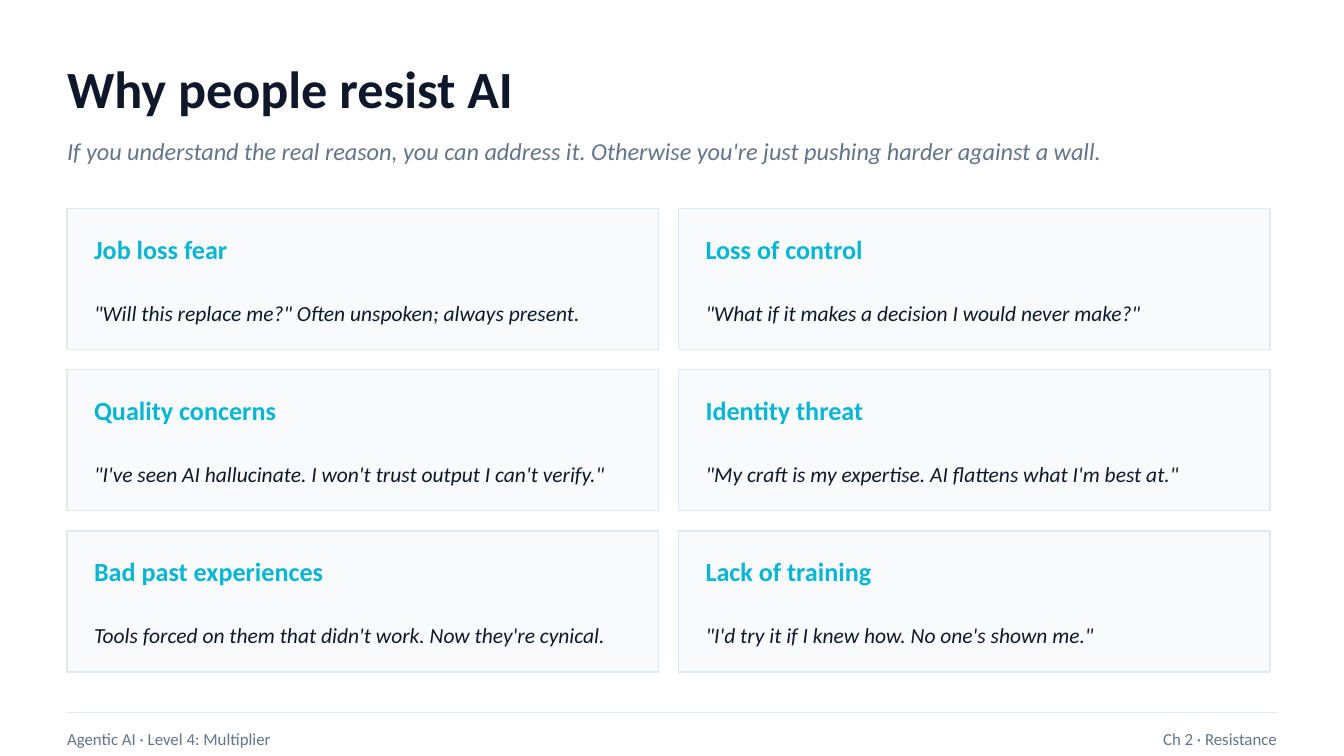
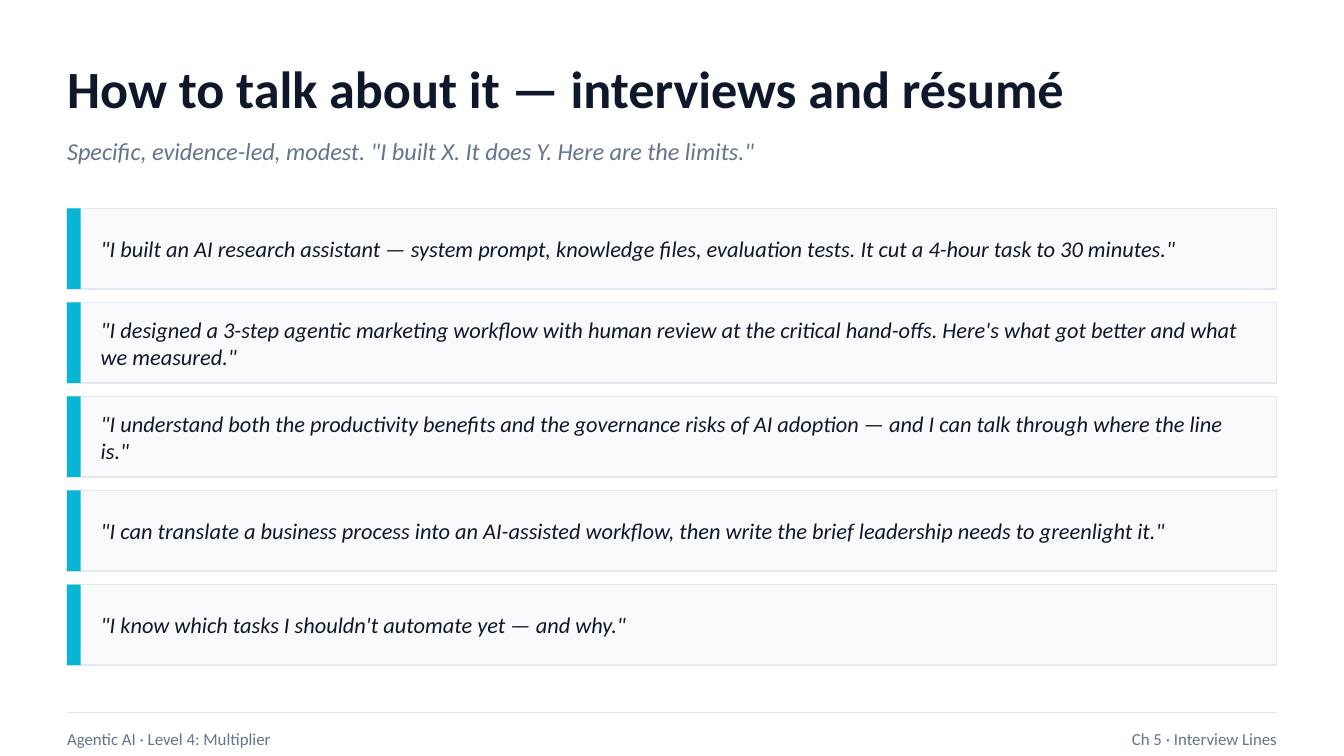
import pptx
import pptx.util
import pptx.dml.color
import pptx.enum.shapes
import pptx.enum.text
import pptx.oxml.ns
from lxml import etree

Inches = pptx.util.Inches
ALIGN = pptx.enum.text.PP_ALIGN

INK = "0F172A"
MUTED = "64748B"
ACCENT = "06B6D4"
PANEL = "F8FAFC"
RULE = "E2E8F0"

FEARS = [
    ("Job loss fear", '"Will this replace me?" Often unspoken; always present.'),
    ("Loss of control", '"What if it makes a decision I would never make?"'),
    ("Quality concerns", '"I\'ve seen AI hallucinate. I won\'t trust output I can\'t verify."'),
    ("Identity threat", '"My craft is my expertise. AI flattens what I\'m best at."'),
    ("Bad past experiences", "Tools forced on them that didn't work. Now they're cynical."),
    ("Lack of training", '"I\'d try it if I knew how. No one\'s shown me."'),
]

QUOTES = [
    '"I built an AI research assistant — system prompt, knowledge files, evaluation tests. '
    'It cut a 4-hour task to 30 minutes."',
    '"I designed a 3-step agentic marketing workflow with human review at the critical hand-offs. '
    'Here\'s what got better and what we measured."',
    '"I understand both the productivity benefits and the governance risks of AI adoption — '
    'and I can talk through where the line is."',
    '"I can translate a business process into an AI-assisted workflow, '
    'then write the brief leadership needs to greenlight it."',
    '"I know which tasks I shouldn\'t automate yet — and why."',
]


def color(code):
    return pptx.dml.color.RGBColor.from_string(code)


class Deck:
    font = "Calibri"
    left = 0.5
    width = 9
    top = 1.55

    def __init__(self):
        self.show = pptx.Presentation()
        self.show.slide_width = Inches(10)
        self.show.slide_height = Inches(10 * 9 / 16)
        self.slide = None

    def text(self, x, y, w, h, words, size, ink=INK, bold=False, italic=False, align=ALIGN.LEFT):
        frame = self.slide.shapes.add_textbox(Inches(x), Inches(y), Inches(w), Inches(h)).text_frame
        frame.word_wrap = True
        frame.vertical_anchor = pptx.enum.text.MSO_ANCHOR.MIDDLE
        frame.margin_left = frame.margin_right = frame.margin_top = frame.margin_bottom = 0
        para = frame.paragraphs[0]
        para.alignment = align
        run = para.add_run()
        run.text = words
        run.font.name = self.font
        run.font.size = pptx.util.Pt(size)
        run.font.bold = bold
        run.font.italic = italic
        run.font.color.rgb = color(ink)

    def rect(self, x, y, w, h, fill, edge=None):
        box = self.slide.shapes.add_shape(
            pptx.enum.shapes.MSO_SHAPE.RECTANGLE, Inches(x), Inches(y), Inches(w), Inches(h))
        box.shadow.inherit = False
        box.fill.solid()
        box.fill.fore_color.rgb = color(fill)
        if edge:
            box.line.color.rgb = color(edge)
            box.line.width = pptx.util.Pt(0.75)
        else:
            box.line.fill.background()

    def line(self, x, y, w):
        rule = self.slide.shapes.add_connector(
            pptx.enum.shapes.MSO_CONNECTOR.STRAIGHT, Inches(x), Inches(y), Inches(x + w), Inches(y))
        rule.line.color.rgb = color(RULE)
        rule.line.width = pptx.util.Pt(0.75)
        etree.SubElement(rule._element.spPr, pptx.oxml.ns.qn("a:effectLst"))

    def start(self, title, lead):
        self.slide = self.show.slides.add_slide(self.show.slide_layouts[6])
        self.text(self.left, 0.35, self.width, 0.6, title, 28, bold=True)
        self.text(self.left, 0.95, self.width, 0.35, lead, 13, MUTED, italic=True)

    def footer(self, label):
        self.line(self.left, 5.3, self.width)
        self.text(self.left, 5.35, 5, 0.3, "Agentic AI · Level 4: Multiplier", 9, MUTED)
        self.text(5.5, 5.35, 4, 0.3, label, 9, MUTED, align=ALIGN.RIGHT)

    def card(self, x, y, w, h, head, body):
        self.rect(x, y, w, h, PANEL, RULE)
        self.text(x + 0.2, y + 0.1, w - 0.3, 0.4, head, 14, ACCENT, bold=True)
        self.text(x + 0.2, y + 0.55, w - 0.3, 0.45, body, 11.5, italic=True)

    def quote(self, y, h, words):
        self.rect(self.left, y, self.width, h, PANEL, RULE)
        self.rect(self.left, y, 0.1, h, ACCENT)
        self.text(self.left + 0.25, y + 0.05, self.width - 0.4, h - 0.1, words, 12, italic=True)


def main():
    deck = Deck()

    deck.start(
        "Why people resist AI",
        "If you understand the real reason, you can address it. "
        "Otherwise you're just pushing harder against a wall.")
    wide, high, gap = 4.4, 1.05, 0.15
    for i, (head, body) in enumerate(FEARS):
        row, col = divmod(i, 2)
        deck.card(deck.left + col * (wide + gap), deck.top + row * (high + gap), wide, high, head, body)
    deck.footer("Ch 2 · Resistance")

    deck.start(
        "How to talk about it — interviews and résumé",
        'Specific, evidence-led, modest. "I built X. It does Y. Here are the limits."')
    high, gap = 0.6, 0.1
    for i, words in enumerate(QUOTES):
        deck.quote(deck.top + i * (high + gap), high, words)
    deck.footer("Ch 5 · Interview Lines")

    deck.show.save("out.pptx")


if __name__ == "__main__":
    main()
